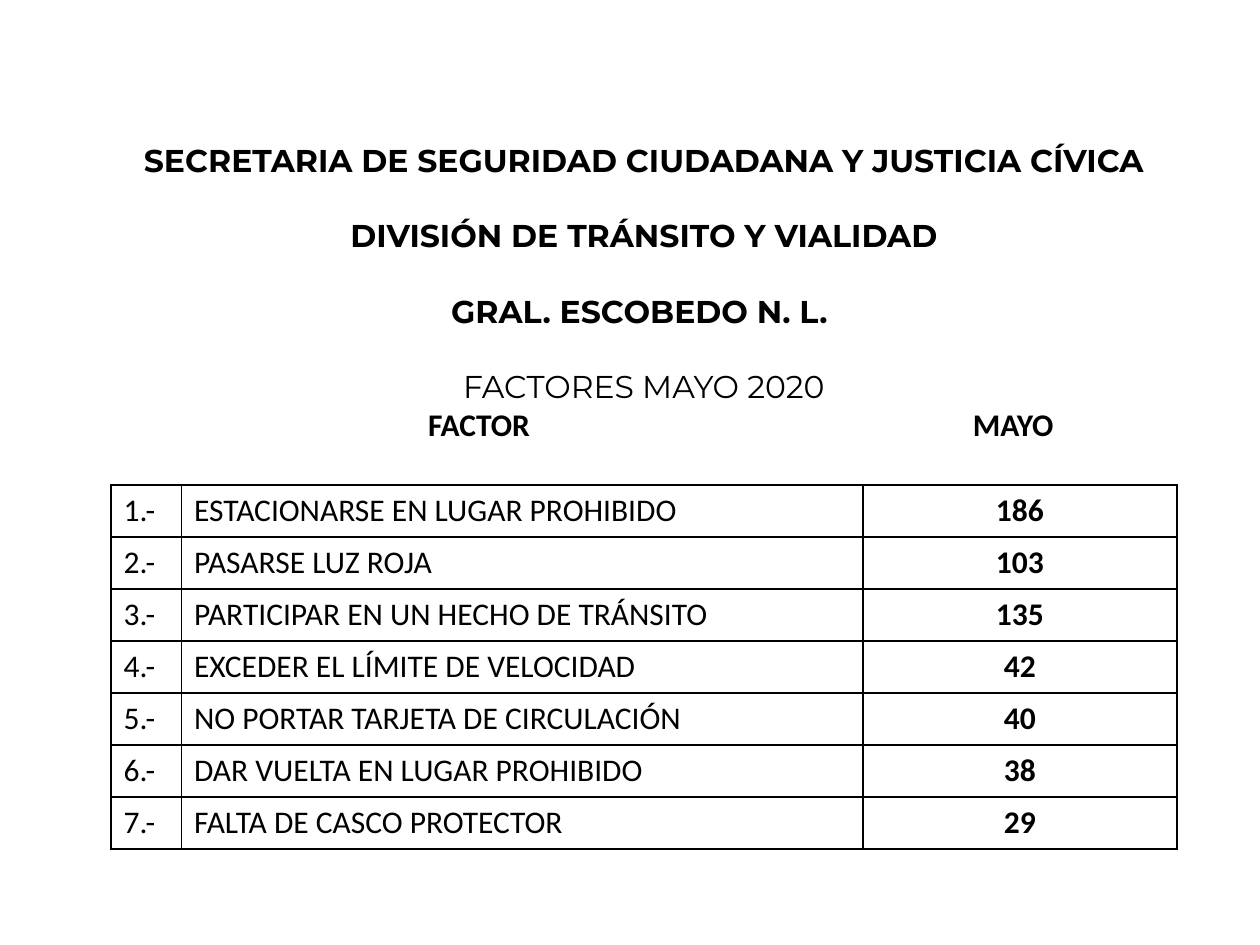
from lxml import etree
from pptx import Presentation
from pptx.dml.color import RGBColor
from pptx.enum import text
from pptx.oxml import ns
from pptx.util import Pt

HEADING = [
    "SECRETARIA DE SEGURIDAD CIUDADANA Y JUSTICIA CÍVICA",
    "DIVISIÓN DE TRÁNSITO Y VIALIDAD",
    "GRAL. ESCOBEDO N. L. ",
    "FACTORES MAYO 2020",
]
COLUMN_LABELS = ["FACTOR", "MAYO"]
FACTORS = [
    ("ESTACIONARSE EN LUGAR PROHIBIDO", 186),
    ("PASARSE LUZ ROJA", 103),
    ("PARTICIPAR EN UN HECHO DE TRÁNSITO", 135),
    ("EXCEDER EL LÍMITE DE VELOCIDAD", 42),
    ("NO PORTAR TARJETA DE CIRCULACIÓN", 40),
    ("DAR VUELTA EN LUGAR PROHIBIDO", 38),
    ("FALTA DE CASCO PROTECTOR", 29),
]
BLACK = "000000"
LEFT, TITLE_TOP, TITLE_HEIGHT = 63.4, 77, 203.8
COLUMN_WIDTHS = [40.3, 389.5, 179.3]
WIDTH = sum(COLUMN_WIDTHS)
TABLE_TOP, ROW_HEIGHT = 277.2, 29.7
FIRST_TABLE_ROWS = 6
LABEL_CENTERS = [203.1, 508.3]


def format_runs(paragraph, font_name, bold, color=BLACK):
    for run in paragraph.runs:
        run.font.name = font_name
        run.font.size = Pt(18)
        run.font.bold = bold
        run.font.color.rgb = RGBColor.from_string(color)


def add_center_tabs(paragraph, positions):
    tabs = etree.SubElement(paragraph._p.get_or_add_pPr(), ns.qn("a:tabLst"))
    for position in positions:
        etree.SubElement(tabs, ns.qn("a:tab"), pos=str(Pt(position)), algn="ctr")


def add_borders(cell, color=BLACK):
    properties = cell._tc.get_or_add_tcPr()
    for side in ("lnL", "lnR", "lnT", "lnB"):
        line = etree.SubElement(properties, ns.qn(f"a:{side}"), w=str(Pt(1)))
        fill = etree.SubElement(line, ns.qn("a:solidFill"))
        etree.SubElement(fill, ns.qn("a:srgbClr"), val=color)


def add_heading(slide):
    title = slide.shapes.title
    title.left, title.top = Pt(LEFT), Pt(TITLE_TOP)
    title.width, title.height = Pt(WIDTH), Pt(TITLE_HEIGHT)
    frame = title.text_frame
    frame.word_wrap = True
    frame.auto_size = text.MSO_AUTO_SIZE.NONE
    frame.vertical_anchor = text.MSO_ANCHOR.TOP
    frame.text = "\n".join(HEADING)
    for index, paragraph in enumerate(frame.paragraphs):
        paragraph.alignment = text.PP_ALIGN.CENTER
        if index:
            paragraph.space_before = Pt(21.5)
        format_runs(paragraph, "Montserrat", index < len(HEADING) - 1)

    labels = frame.add_paragraph()
    labels.alignment = text.PP_ALIGN.LEFT
    add_center_tabs(labels, LABEL_CENTERS)
    labels.text = "".join("\t" + label for label in COLUMN_LABELS)
    format_runs(labels, "Calibri", True)


def add_factor_table(slide, start, stop):
    """Add the factors from start up to stop, placed below the earlier ones."""
    factors = FACTORS[start:stop]
    table = slide.shapes.add_table(
        len(factors), len(COLUMN_WIDTHS), Pt(LEFT), Pt(TABLE_TOP + start * ROW_HEIGHT),
        Pt(WIDTH), Pt(len(factors) * ROW_HEIGHT)).table
    table.first_row = table.horz_banding = False
    for column, width in zip(table.columns, COLUMN_WIDTHS):
        column.width = Pt(width)
    for index, (row, (factor, count)) in enumerate(zip(table.rows, factors)):
        row.height = Pt(ROW_HEIGHT)
        values = f"{start + index + 1}.-", factor, str(count)
        for column, (cell, value) in enumerate(zip(row.cells, values)):
            is_count = column == 2
            add_borders(cell)
            cell.fill.background()
            cell.text_frame.text = value
            paragraph = cell.text_frame.paragraphs[0]
            if is_count:
                paragraph.alignment = text.PP_ALIGN.CENTER
            format_runs(paragraph, "Calibri", is_count)


def main():
    presentation = Presentation()
    presentation.slide_width, presentation.slide_height = Pt(720), Pt(540)
    slide = presentation.slides.add_slide(presentation.slide_layouts[5])
    add_heading(slide)
    add_factor_table(slide, 0, FIRST_TABLE_ROWS)
    add_factor_table(slide, FIRST_TABLE_ROWS, len(FACTORS))
    presentation.save("out.pptx")


if __name__ == "__main__":
    main()
